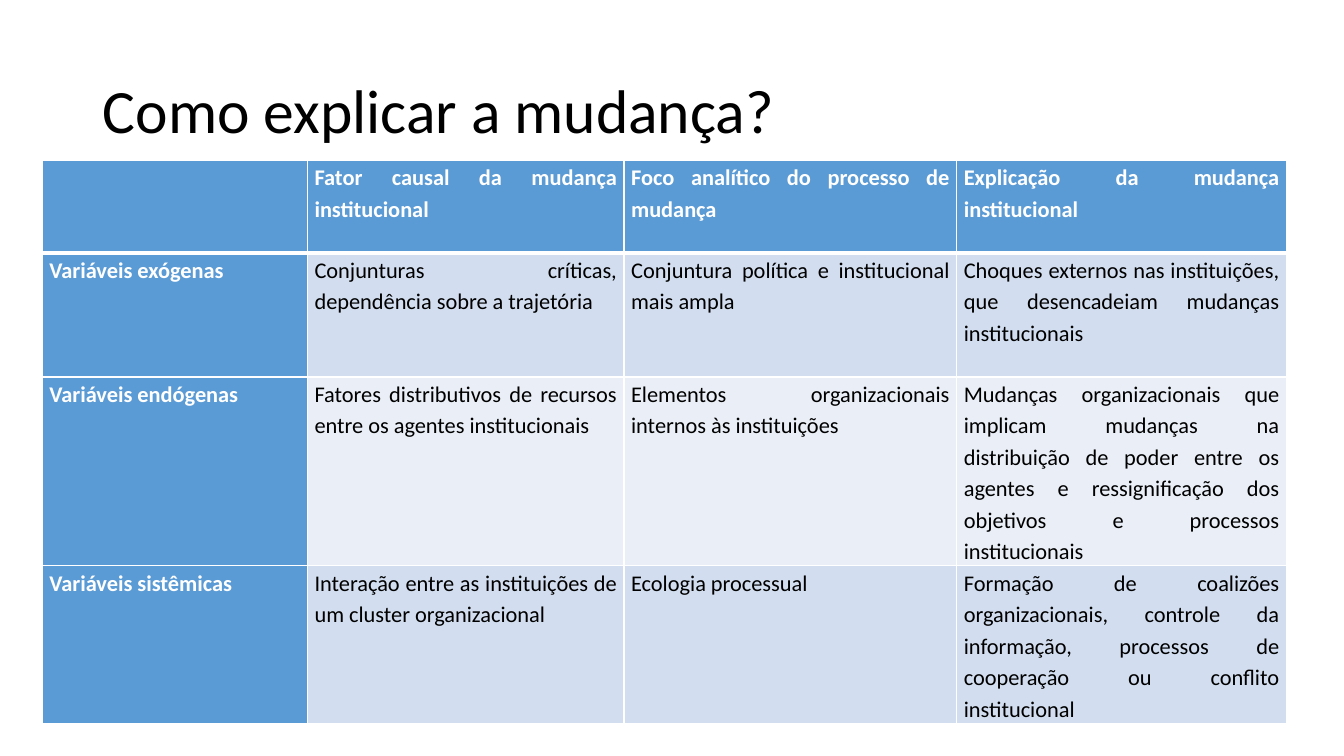
from lxml.etree import SubElement
from pptx import Presentation
from pptx.dml.color import RGBColor
from pptx.enum.text import MSO_ANCHOR, PP_ALIGN
from pptx.oxml.ns import qn
from pptx.util import Inches, Pt

FONT = "Calibri"
WHITE, BLACK, BLUE = "FFFFFF", "000000", "5B9BD5"
BANDS = ("D2DEEF", "EAEFF7")
COLUMN_WIDTHS = (2.63, 3.14, 3.3, 3.27)
ROW_HEIGHTS = (0.92, 1.23, 1.86, 1.54)
ROWS = (
    ("", "Fator causal da mudança institucional",
     "Foco analítico do processo de mudança",
     "Explicação da mudança institucional"),
    ("Variáveis exógenas",
     "Conjunturas críticas, dependência sobre a trajetória",
     "Conjuntura política e institucional mais ampla",
     "Choques externos nas instituições, que desencadeiam mudanças institucionais"),
    ("Variáveis endógenas",
     "Fatores distributivos de recursos entre os agentes institucionais",
     "Elementos organizacionais internos às instituições",
     "Mudanças organizacionais que implicam mudanças na distribuição de poder entre os "
     "agentes e ressignificação dos objetivos e processos institucionais"),
    ("Variáveis sistêmicas",
     "Interação entre as instituições de um cluster organizacional",
     "Ecologia processual",
     "Formação de coalizões organizacionais, controle da informação, processos de "
     "cooperação ou conflito institucional"),
)


def color(value):
    return RGBColor.from_string(value)


def format_para(para, size, ink, bold, align, spacing):
    para.alignment = align
    para.line_spacing = spacing
    for span in para.runs:
        span.font.name = FONT
        span.font.size = Pt(size)
        span.font.bold = bold
        span.font.color.rgb = color(ink)


def add_borders(cell, widths):
    """Draw white cell borders; widths maps L, R, T, B (in that order) to points."""
    properties = cell._tc.get_or_add_tcPr()
    for side, width in widths.items():
        line = SubElement(properties, qn(f"a:ln{side}"), w=str(Pt(width)))
        fill = SubElement(line, qn("a:solidFill"))
        SubElement(fill, qn("a:srgbClr"), val=WHITE)


def add_title(page, text, box):
    title = page.shapes.title
    title.left, title.top, title.width, title.height = map(Inches, box)
    frame = title.text_frame
    frame.text = text
    frame.vertical_anchor = MSO_ANCHOR.MIDDLE
    format_para(frame.paragraphs[0], 44, BLACK, False, PP_ALIGN.LEFT, 0.9)


def fill_cell(cell, text, row, column):
    heading = row == 0 or column == 0
    add_borders(cell, {"L": 1, "R": 1, "T": 3 if row == 1 else 1, "B": 3 if row == 0 else 1})
    cell.fill.solid()
    cell.fill.fore_color.rgb = color(BLUE if heading else BANDS[(row - 1) % 2])
    cell.margin_left = cell.margin_right = Inches(0.07)
    cell.margin_top = cell.margin_bottom = 0
    cell.text = text
    format_para(cell.text_frame.paragraphs[0], 16, WHITE if heading else BLACK,
                heading, PP_ALIGN.JUSTIFY, 1.15)


def add_comparison(page, left, top):
    size = sum(COLUMN_WIDTHS), sum(ROW_HEIGHTS)
    table = page.shapes.add_table(len(ROWS), len(COLUMN_WIDTHS),
                                  *map(Inches, (left, top, *size))).table
    for column, width in zip(table.columns, COLUMN_WIDTHS):
        column.width = Inches(width)
    for row, height in zip(table.rows, ROW_HEIGHTS):
        row.height = Inches(height)
    for row, texts in enumerate(ROWS):
        for column, text in enumerate(texts):
            fill_cell(table.cell(row, column), text, row, column)


def main():
    deck = Presentation()
    deck.slide_width, deck.slide_height = Inches(13.33), Inches(7.5)
    page = deck.slides.add_slide(deck.slide_layouts.get_by_name("Title Only"))
    add_title(page, "Como explicar a mudança?", (0.92, 0.4, 11.5, 1.45))
    add_comparison(page, 0.42, 1.59)
    deck.save("out.pptx")


if __name__ == "__main__":
    main()
